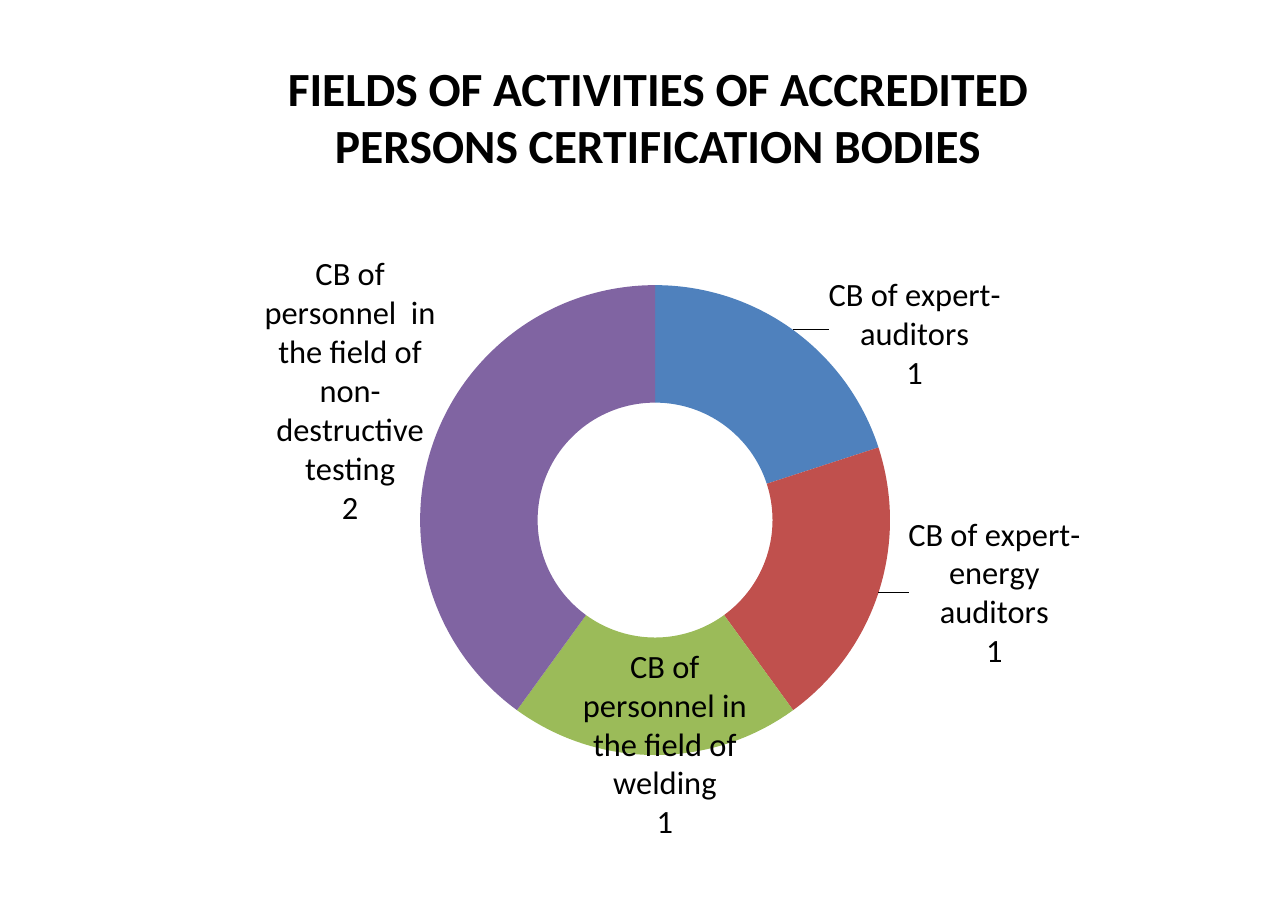
from dataclasses import dataclass

from pptx import Presentation
from pptx.chart.data import CategoryChartData
from pptx.dml.color import RGBColor
from pptx.enum.chart import XL_CHART_TYPE as ChartType
from pptx.enum.text import MSO_ANCHOR as Anchor, PP_ALIGN as Align
from pptx.oxml import parse_xml
from pptx.oxml.ns import nsdecls
from pptx.util import Inches, Pt


@dataclass(frozen=True)
class Theme:
    font: str = "Calibri"
    ink: str = "000000"
    slices: tuple = ("4F81BD", "C0504D", "9BBB59", "8064A2")
    title_size: int = 22
    label_size: int = 15


class SlideBuilder:
    def __init__(self, slide, theme):
        self.slide = slide
        self.theme = theme

    def style(self, font, size, bold=False):
        font.name = self.theme.font
        font.size = Pt(size)
        font.bold = bold
        font.color.rgb = RGBColor.from_string(self.theme.ink)

    def title(self, text, left, top, width, height):
        box = self.slide.shapes.add_textbox(
            Inches(left), Inches(top), Inches(width), Inches(height))
        frame = box.text_frame
        frame.word_wrap = True
        frame.vertical_anchor = Anchor.BOTTOM
        frame.margin_left = frame.margin_right = Inches(0.08)
        frame.margin_top = frame.margin_bottom = Inches(0.04)
        para = frame.paragraphs[0]
        para.text = text
        para.alignment = Align.CENTER
        self.style(para.font, self.theme.title_size, bold=True)

    def doughnut(self, fields, left, top, width, height, ring):
        data = CategoryChartData()
        data.categories = [name for name, _, _ in fields]
        data.add_series("Series 1", [count for _, count, _ in fields])
        chart = self.slide.shapes.add_chart(
            ChartType.DOUGHNUT, Inches(left), Inches(top),
            Inches(width), Inches(height), data).chart
        chart.has_title = False
        chart.has_legend = False
        self.style(chart.font, self.theme.label_size)
        plot = chart.plots[0]
        plot.vary_by_categories = True

        # Ring placement as fractions of the chart area
        ring_left, ring_top, diameter = ring
        area = chart._chartSpace.chart.plotArea
        for old in area.findall(area.tag.replace("plotArea", "layout")):
            area.remove(old)
        area.insert(0, self.layout(
            x=(ring_left - left) / width, y=(ring_top - top) / height,
            w=diameter / width, h=diameter / height))

        # Slice colours and labels
        series = plot.series[0]
        labels = series.data_labels
        labels.show_category_name = labels.show_value = True
        labels.show_percentage = False
        self.style(labels.font, self.theme.label_size)
        for index, (_, _, (shift_x, shift_y)) in enumerate(fields):
            fill = series.points[index].format.fill
            fill.solid()
            fill.fore_color.rgb = RGBColor.from_string(self.theme.slices[index])
            self.style(series.points[index].data_label.font, self.theme.label_size)
            label = labels._element.dLbl_lst[index]
            label.insert(1, self.layout(x=shift_x / width, y=shift_y / height))
            for flag in label:
                if flag.tag.endswith("}showCatName"):
                    flag.set("val", "1")
            label.append(parse_xml(
                f'<c:separator {nsdecls("c")}>\n</c:separator>'))

    @staticmethod
    def layout(**fractions):
        modes = "".join(f'<c:{axis}Mode val="edge"/>' for axis in "xy") \
            if "w" in fractions else ""
        target = '<c:layoutTarget val="inner"/>' if modes else ""
        values = "".join(f'<c:{key} val="{value:.3f}"/>'
                         for key, value in fractions.items())
        return parse_xml(f'<c:layout {nsdecls("c")}><c:manualLayout>'
                         f'{target}{modes}{values}</c:manualLayout></c:layout>')


# Field, number of bodies, label shift from the slice centre in inches
FIELDS = [
    ("CB of expert-auditors", 1, (1.0, -0.28)),
    ("CB of expert-energy auditors", 1, (1.1, 0.12)),
    ("CB of personnel in the field of welding", 1, (0.06, 0.31)),
    ("CB of personnel  in the field of non-destructive testing", 2, (-0.88, -0.48)),
]


def main():
    deck = Presentation()
    deck.slide_width, deck.slide_height = Inches(8.27), Inches(5.83)
    page = SlideBuilder(deck.slides.add_slide(deck.slide_layouts[6]), Theme())

    # Heading
    page.title("FIELDS OF ACTIVITIES OF ACCREDITED \n"
               "PERSONS CERTIFICATION BODIES ", 0.51, 0.16, 7.5, 0.99)

    # Bodies by field
    page.doughnut(FIELDS, 1.06, 1.26, 6.3, 4.25, ring=(2.7, 1.83, 3.02))

    deck.save("out.pptx")


if __name__ == "__main__":
    main()
